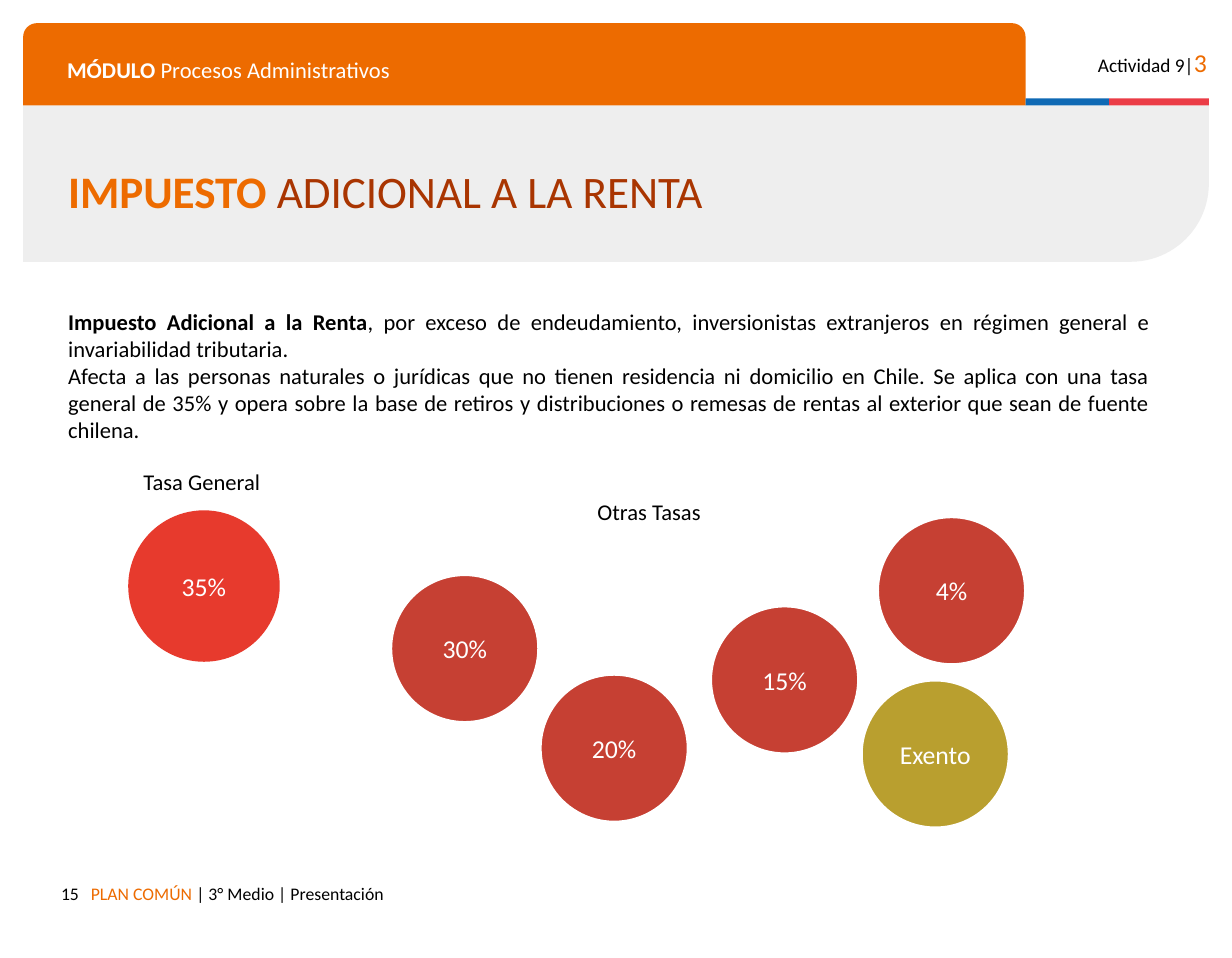
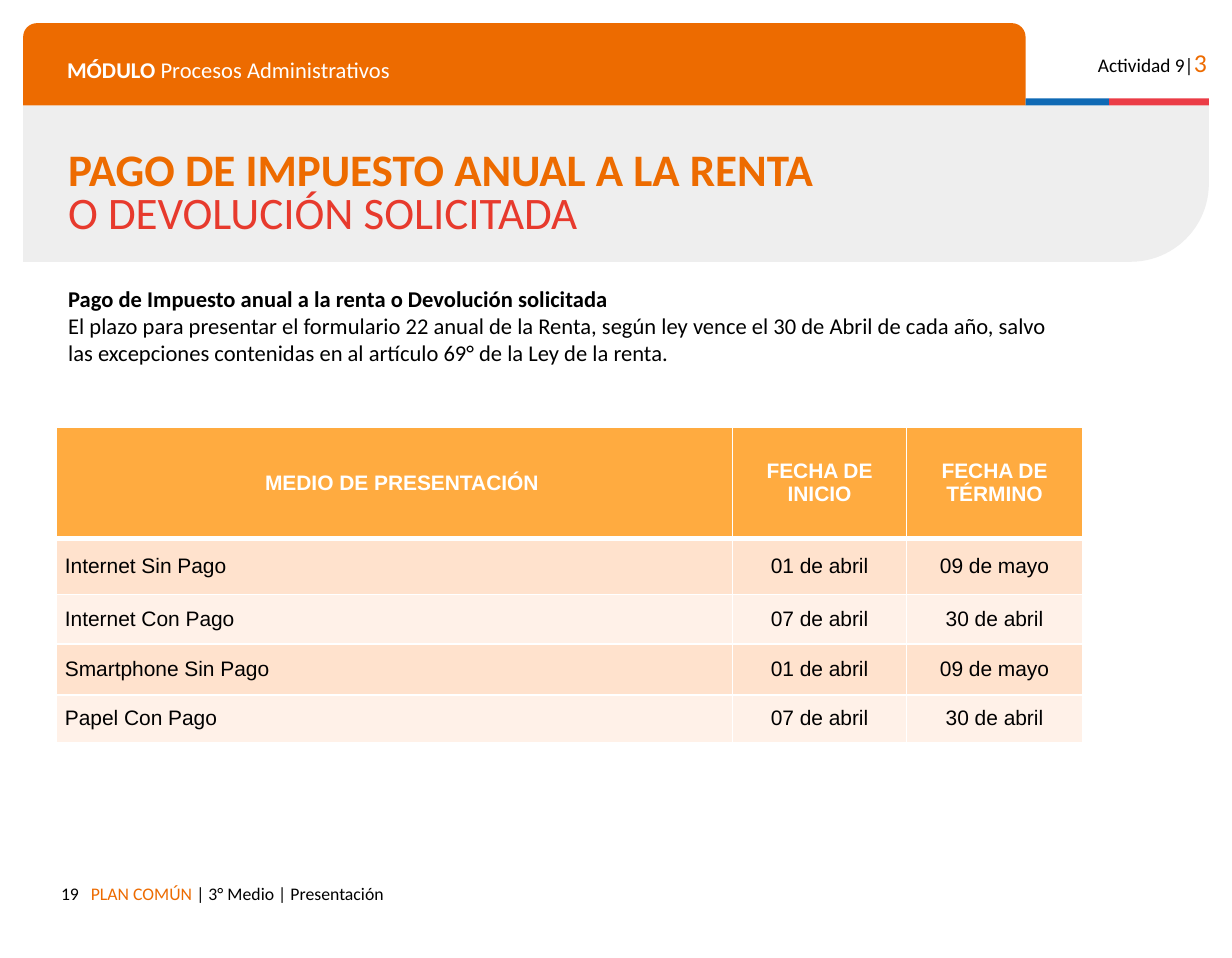
import dataclasses

import pptx
import pptx.dml.color
import pptx.enum.shapes
import pptx.enum.text
import pptx.oxml.ns
import pptx.util
from lxml import etree

SHAPES = pptx.enum.shapes.MSO_SHAPE
ALIGN = pptx.enum.text.PP_ALIGN
ANCHOR = pptx.enum.text.MSO_ANCHOR


@dataclasses.dataclass(frozen=True)
class Theme:
    orange: str = "ED6B00"
    panel: str = "EEEEEE"
    blue: str = "0F69B4"
    flag_red: str = "EB3C46"
    red: str = "E73A2D"
    brick: str = "C64033"
    olive: str = "B99F2F"
    rust: str = "A93501"
    black: str = "000000"
    white: str = "FFFFFF"
    table_head: str = "FFAB40"
    table_bands: tuple = ("FFE2CD", "FFF1E8")
    font: str = "Calibri"
    table_font: str = "Arial"
    title: int = 28
    rate: int = 16
    body: int = 14
    table: int = 13
    activity: int = 12
    footer: int = 11


THEME = Theme()


@dataclasses.dataclass(frozen=True)
class Box:
    left: float
    top: float
    width: float
    height: float

    def percent(self, left, top, width, height):
        return Box(self.left + self.width * left / 100,
                   self.top + self.height * top / 100,
                   self.width * width / 100,
                   self.height * height / 100)

    def square(self, left, top, side):
        return self.percent(left, top, side, side * self.width / self.height)

    def place(self):
        return [pptx.util.Inches(length) for length in dataclasses.astuple(self)]


PAGE = Box(0, 0, 10.63, 8.27)
HEADER = PAGE.percent(1.88, 2.42, 96.24, 24.91)
BODY = PAGE.percent(4.61, 29.14, 92.1, 58.28)
FOOTER = PAGE.percent(1.88, 91.05, 71.78, 4.59)


def rgb(color):
    return pptx.dml.color.RGBColor.from_string(color)


def span(text, **style):
    return text, style


def write(frame, *paras, size=THEME.body, color=THEME.black, bold=False,
          font=THEME.font, align=ALIGN.LEFT, spacing=None):
    for index, spans in enumerate(paras):
        para = frame.paragraphs[0] if index == 0 else frame.add_paragraph()
        para.alignment = align
        para.line_spacing = spacing
        for text, style in spans:
            run = para.add_run()
            run.text = text
            run.font.name = font
            run.font.size = pptx.util.Pt(style.get("size", size))
            run.font.bold = style.get("bold", bold)
            run.font.color.rgb = rgb(style.get("color", color))


def add_text(page, box, *paras, inset=0.1, anchor=ANCHOR.TOP, **style):
    frame = page.shapes.add_textbox(*box.place()).text_frame
    frame.word_wrap = True
    frame.vertical_anchor = anchor
    frame.margin_left = frame.margin_right = pptx.util.Inches(0.1)
    frame.margin_top = frame.margin_bottom = pptx.util.Inches(inset)
    write(frame, *paras, **style)


def add_block(page, box, kind, fill, adjustments=(), line=None):
    shape = page.shapes.add_shape(kind, *box.place())
    shape.shadow.inherit = False
    shape.fill.solid()
    shape.fill.fore_color.rgb = rgb(fill)
    if line:
        shape.line.color.rgb = rgb(line)
        shape.line.width = pptx.util.Pt(2)
    else:
        shape.line.fill.background()
    for index, value in enumerate(adjustments):
        shape.adjustments[index] = value
    return shape


def add_header(page, box, title):
    panel = add_block(page, box.percent(0, 34.47, 100, 65.53),
                      SHAPES.ROUND_1_RECTANGLE, THEME.panel, [0.5])
    panel.element.spPr.get_or_add_xfrm().set("flipV", "1")
    add_block(page, box.percent(0, 0, 84.55, 34.47),
              SHAPES.ROUND_2_SAME_RECTANGLE, THEME.orange, [0.167, 0])
    for left, width, color in ((84.55, 7.04, THEME.blue),
                               (91.59, 8.41, THEME.flag_red)):
        add_block(page, box.percent(left, 31.55, width, 2.91), SHAPES.RECTANGLE, color)
    add_text(page, box.percent(88.27, 4.85, 12.51, 18.45),
             [span("Actividad 9|"), span("3", size=THEME.rate, color=THEME.orange)],
             size=THEME.activity, align=ALIGN.RIGHT)
    add_text(page, box.percent(2.74, 8.74, 79.57, 16.99),
             [span("MÓDULO", bold=True), span(" Procesos Administrativos")],
             color=THEME.white)
    add_text(page, box.percent(2.83, 63.59, 95.7, 16.99), *title,
             size=THEME.title, anchor=ANCHOR.MIDDLE, spacing=0.8)


def add_footer(page, box, number):
    add_text(page, box.percent(6.36, 0, 93.64, 100),
             [span("PLAN COMÚN ", color=THEME.orange),
              span("| 3° Medio | Presentación")], size=THEME.footer)
    add_text(page, box.percent(0, 0, 7.6, 100), [span(str(number))],
             size=THEME.footer, align=ALIGN.RIGHT)


def add_rates(page, box):
    labels = (("Tasa General", 6.44, 32.78, 12.67),
              ("Otras Tasas", 46.48, 38.17, 11.44))
    for label, left, top, width in labels:
        add_text(page, box.percent(left, top, width, 7.05), [span(label)],
                 inset=0.05, align=ALIGN.CENTER)
    rates = (("35%", 6.44, 41.7, THEME.red, THEME.red),
             ("30%", 29.42, 52.9, THEME.brick, THEME.white),
             ("20%", 42.59, 70.75, THEME.brick, THEME.white),
             ("15%", 57.61, 58.51, THEME.brick, THEME.white),
             ("4%", 72.32, 42.53, THEME.brick, THEME.white),
             ("Exento", 70.89, 71.78, THEME.olive, THEME.white))
    for rate, left, top, fill, line in rates:
        circle = add_block(page, box.square(left, top, 13.07), SHAPES.OVAL,
                           fill, line=line)
        frame = circle.text_frame
        frame.vertical_anchor = ANCHOR.MIDDLE
        write(frame, [span(rate)], size=THEME.rate, color=THEME.white,
              align=ALIGN.CENTER)


def set_borders(cell, bottom):
    properties = cell._tc.get_or_add_tcPr()
    qn = pptx.oxml.ns.qn
    for index, (side, width) in enumerate((("L", 1), ("R", 1), ("T", 1), ("B", bottom))):
        line = etree.Element(qn(f"a:ln{side}"), w=str(pptx.util.Pt(width)))
        fill = etree.SubElement(line, qn("a:solidFill"))
        etree.SubElement(fill, qn("a:srgbClr"), val=THEME.white)
        properties.insert(index, line)


def add_deadlines(page, box, rows, column_shares, row_shares):
    table = page.shapes.add_table(len(rows), len(column_shares), *box.place()).table
    table.horz_banding = False
    for column, share in zip(table.columns, column_shares):
        column.width = pptx.util.Inches(box.width * share / 100)
    for row, share in zip(table.rows, row_shares):
        row.height = pptx.util.Inches(box.height * share / 100)
    for row_index, texts in enumerate(rows):
        head = row_index == 0
        fill = THEME.table_head if head else THEME.table_bands[(row_index - 1) % 2]
        for column_index, text in enumerate(texts):
            cell = table.cell(row_index, column_index)
            cell.fill.solid()
            cell.fill.fore_color.rgb = rgb(fill)
            cell.vertical_anchor = ANCHOR.MIDDLE
            cell.margin_left = cell.margin_right = pptx.util.Inches(0.07)
            cell.margin_top = cell.margin_bottom = 0
            centred = head or column_index > 0
            write(cell.text_frame, [span(text)], size=THEME.table,
                  font=THEME.table_font, bold=head,
                  color=THEME.white if head else THEME.black,
                  align=ALIGN.CENTER if centred else ALIGN.LEFT)
            set_borders(cell, 3 if head else 1)
    first = table.cell(0, 0).text_frame.paragraphs[0]
    first._p.get_or_add_pPr().set("marL", str(pptx.util.Inches(0.12)))


def add_page(deck, number, title):
    page = deck.slides.add_slide(deck.slide_layouts[6])
    add_header(page, HEADER, title)
    add_footer(page, FOOTER, number)
    return page


def build_additional_tax(deck):
    title = [span("IMPUESTO", color=THEME.orange, bold=True),
             span(" ADICIONAL A LA RENTA", color=THEME.rust)]
    page = add_page(deck, 15, [title])
    add_text(page, BODY.percent(0, 4.15, 97.34, 26.56),
             [span("Impuesto Adicional a la Renta", bold=True),
              span(", por exceso de endeudamiento, inversionistas extranjeros en "
                   "régimen general e invariabilidad tributaria.")],
             [span("Afecta a las personas naturales o jurídicas que no tienen "
                   "residencia ni domicilio en Chile. Se aplica con una tasa general "
                   "de 35% y opera sobre la base de retiros y distribuciones o remesas "
                   "de rentas al exterior que sean de fuente chilena.")],
             inset=0.05, align=ALIGN.JUSTIFY)
    add_rates(page, BODY)


def build_annual_payment(deck):
    title = ([span("PAGO DE IMPUESTO ANUAL A LA RENTA", color=THEME.orange, bold=True)],
             [span("O DEVOLUCIÓN SOLICITADA", color=THEME.red)])
    page = add_page(deck, 19, title)
    add_text(page, BODY.percent(0, 0, 90.4, 16.8),
             [span("Pago de Impuesto anual a la renta o Devolución solicitada", bold=True)],
             [span("El plazo para presentar el formulario 22 anual de la Renta, según "
                   "ley vence el 30 de Abril de cada año, salvo las excepciones "
                   "contenidas en al artículo 69° de la Ley de la renta.")],
             inset=0.05)
    rows = (("MEDIO DE PRESENTACIÓN", "FECHA DE INICIO", "FECHA DE TÉRMINO"),
            ("Internet Sin Pago", "01 de abril", "09 de mayo"),
            ("Internet Con Pago", "07 de abril", "30 de abril"),
            ("Smartphone Sin Pago", "01 de abril", "09 de mayo"),
            ("Papel Con Pago", "07 de abril", "30 de abril"))
    add_deadlines(page, BODY.percent(0, 26.56, 90.4, 56.43), rows,
                  (65.88, 16.95, 17.17), (35.29, 17.65, 15.81, 16.18, 15.07))


def main():
    deck = pptx.Presentation()
    deck.slide_width = pptx.util.Inches(PAGE.width)
    deck.slide_height = pptx.util.Inches(PAGE.height)
    build_additional_tax(deck)
    build_annual_payment(deck)
    deck.save("out.pptx")


if __name__ == "__main__":
    main()
